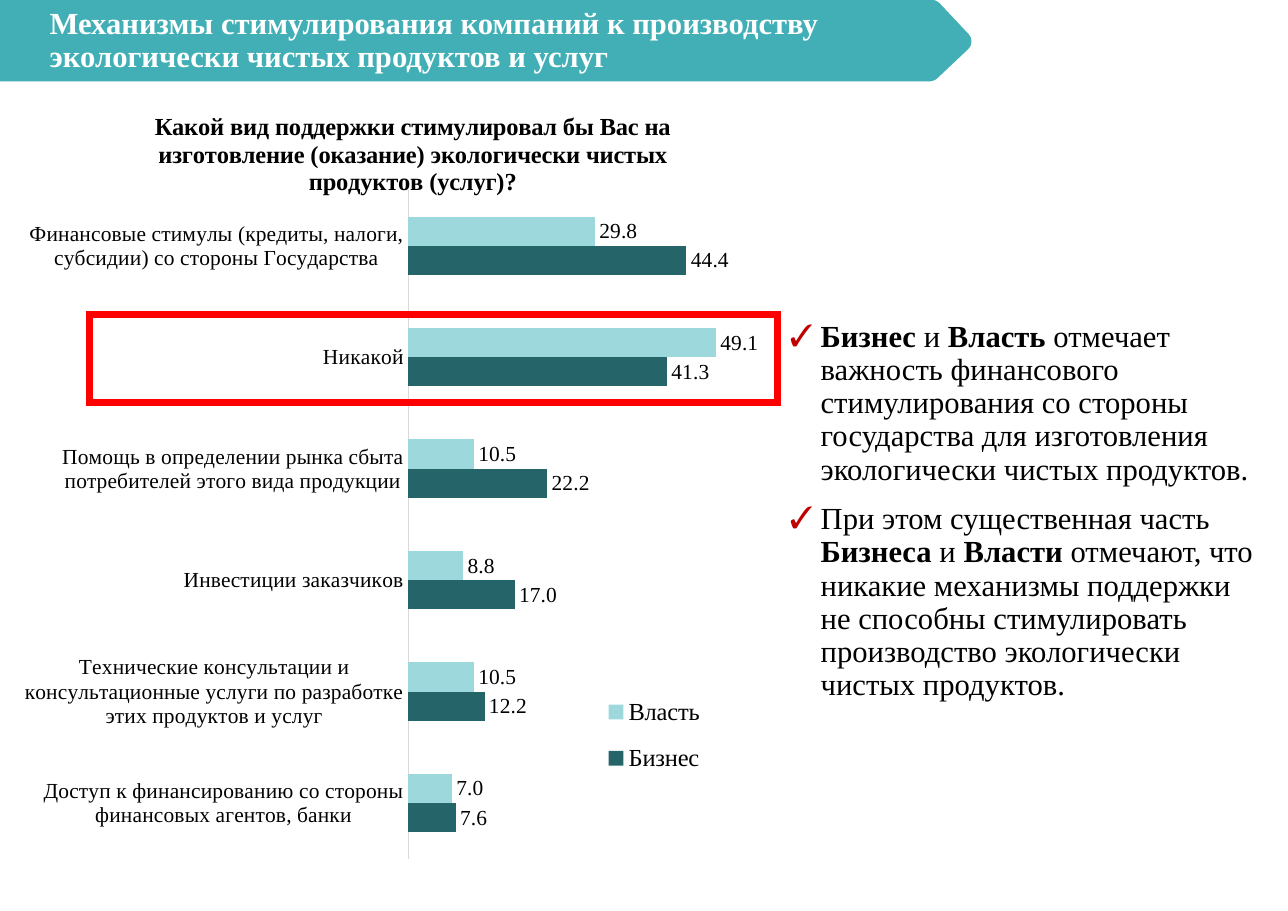
from dataclasses import dataclass

from lxml.etree import SubElement as Sub
from pptx import Presentation
from pptx.chart.data import CategoryChartData as Data
from pptx.dml.color import RGBColor as RGB
from pptx.enum.chart import XL_CHART_TYPE as Kind
from pptx.enum.chart import XL_LABEL_POSITION as Spot
from pptx.enum.chart import XL_LEGEND_POSITION as Side
from pptx.enum.chart import XL_TICK_LABEL_POSITION as Tag
from pptx.enum.chart import XL_TICK_MARK as Tick
from pptx.enum.shapes import MSO_SHAPE as Form
from pptx.enum.text import MSO_ANCHOR as Anchor
from pptx.enum.text import MSO_AUTO_SIZE as Fit
from pptx.enum.text import PP_ALIGN as Align
from pptx.oxml import parse_xml
from pptx.oxml.ns import nsdecls, qn
from pptx.util import Cm, Pt

FACE = "Times New Roman"
BLACK = RGB(0, 0, 0)
WHITE = RGB(255, 255, 255)
TEAL = RGB(0x41, 0xAF, 0xB5)
DARK = RGB(0x25, 0x65, 0x69)
LIGHT = RGB(0x9D, 0xD9, 0xDC)
GRAY = RGB(0xD9, 0xD9, 0xD9)
RED = RGB(255, 0, 0)
WINE = RGB(0xC0, 0, 0)


@dataclass
class Box:
    left: float
    top: float
    width: float
    height: float

    def cm(self) -> tuple:
        return Cm(self.left), Cm(self.top), Cm(self.width), Cm(self.height)


@dataclass
class Group:
    name: str
    color: RGB
    vals: tuple


CHOICES = (
    "Доступ к финансированию со стороны финансовых агентов, банки",
    "Технические консультации и консультационные услуги по разработке этих продуктов и услуг",
    "Инвестиции заказчиков",
    "Помощь в определении рынка сбыта потребителей этого вида продукции",
    "Никакой",
    "Финансовые стимулы (кредиты, налоги, субсидии) со стороны Государства",
)
GROUPS = (
    Group("Бизнес", DARK, (7.6, 12.2, 17.0, 22.2, 41.3, 44.4)),
    Group("Власть", LIGHT, (7.0, 10.5, 8.8, 10.5, 49.1, 29.8)),
)
ASK = (
    "Какой вид поддержки стимулировал бы Вас на изготовление "
    "(оказание) экологически чистых продуктов (услуг)?"
)
HEAD = "Механизмы стимулирования компаний к производству экологически чистых продуктов и услуг"
POINTS = (
    (
        ("Бизнес", True),
        (" и ", False),
        ("Власть", True),
        (" отмечает важность финансового стимулирования со стороны государства "
         "для изготовления экологически чистых продуктов.", False),
    ),
    (
        ("При этом существенная часть ", False),
        ("Бизнеса", True),
        (" и ", False),
        ("Власти", True),
        (" отмечают, что никакие механизмы поддержки не способны стимулировать "
         "производство экологически чистых продуктов.", False),
    ),
)


def style(font, size: int, color: RGB = BLACK, bold: bool | None = None) -> None:
    font.name, font.size, font.bold = FACE, Pt(size), bold
    font.color.rgb = color


def place(shape, box: Box) -> None:
    shape.left, shape.top, shape.width, shape.height = box.cm()


def block(slide, form: Form, box: Box, turn: float = 0):
    shape = slide.shapes.add_shape(form, *box.cm())
    shape.shadow.inherit = False
    shape.rotation = turn
    return shape


def paint(slide, form: Form, box: Box, turn: float = 0) -> None:
    shape = block(slide, form, box, turn)
    shape.fill.solid()
    shape.fill.fore_color.rgb = TEAL
    shape.line.fill.background()


def layout(box: Box):
    node = parse_xml(f"<c:layout {nsdecls('c')}><c:manualLayout/></c:layout>")
    pairs = (("xMode", "edge"), ("yMode", "edge"), ("x", box.left),
             ("y", box.top), ("w", box.width), ("h", box.height))
    for tag, val in pairs:
        Sub(node[0], qn(f"c:{tag}")).set("val", str(val))
    return node


def clear(node) -> None:
    for old in node.findall(qn("c:layout")):
        node.remove(old)


def plot(slide) -> None:
    data = Data(number_format="0.0")
    data.categories = CHOICES
    for group in GROUPS:
        data.add_series(group.name, group.vals)
    box = Box(0.54, 1.95, 17.96, 18.29)
    chart = slide.shapes.add_chart(Kind.BAR_CLUSTERED, *box.cm(), data).chart
    style(chart.font, 14)

    chart.has_title = True
    line = chart.chart_title.text_frame.paragraphs[0]
    line.text = ASK
    style(line.font, 16, bold=True)
    chart.chart_title.include_in_layout = False

    chart.has_legend = True
    key = chart.legend
    key.position, key.include_in_layout = Side.BOTTOM, False
    style(key.font, 16)
    clear(key._element)
    mark = key._element.find(qn("c:legendPos"))
    mark.addnext(layout(Box(0.73, 0.75, 0.16, 0.14)))

    rows, scale = chart.category_axis, chart.value_axis
    rows.major_tick_mark = Tick.NONE
    style(rows.tick_labels.font, 14)
    rows.format.line.color.rgb = GRAY
    rows.format.line.width = Pt(0.75)
    scale.minimum_scale, scale.maximum_scale = 0, 60
    scale.has_major_gridlines = False
    scale.tick_label_position = Tag.NONE
    scale.visible = False

    bars = chart.plots[0]
    bars.gap_width, bars.overlap = 182, 0
    bars.vary_by_categories = False
    for series, group in zip(bars.series, GROUPS):
        series.format.fill.solid()
        series.format.fill.fore_color.rgb = group.color
        tags = series.data_labels
        tags.show_value, tags.position = True, Spot.OUTSIDE_END
        tags.number_format, tags.number_format_is_linked = "0.0", False
        style(tags.font, 14)

    area = chart._chartSpace.chart.plotArea
    clear(area)
    spot = layout(Box(0.494, 0.133, 0.483, 0.843))
    inner = parse_xml(f'<c:layoutTarget {nsdecls("c")} val="inner"/>')
    spot[0].insert(0, inner)
    area.insert(0, spot)


def check(para) -> None:
    props = para._p.get_or_add_pPr()
    props.set("marL", str(Cm(0.71)))
    props.set("indent", str(Cm(-0.71)))
    hue = Sub(props, qn("a:buClr"))
    Sub(hue, qn("a:srgbClr")).set("val", str(WINE))
    Sub(props, qn("a:buFont")).set("typeface", FACE)
    Sub(props, qn("a:buChar")).set("char", "✓")


def write(body) -> None:
    place(body, Box(17.96, 7.28, 11.51, 9.75))
    frame = body.text_frame
    frame.auto_size = Fit.NONE
    for num, parts in enumerate(POINTS):
        para = frame.add_paragraph() if num else frame.paragraphs[0]
        para.line_spacing = 0.9
        para.space_before = Pt(11 if num else 0)
        check(para)
        style(para.font, 20)
        for text, bold in parts:
            run = para.add_run()
            run.text, run.font.bold = text, bold


def main() -> None:
    deck = Presentation()
    deck.slide_width, deck.slide_height = Cm(29.7), Cm(21)
    slide = deck.slides.add_slide(deck.slide_layouts[1])
    title, body = slide.placeholders

    paint(slide, Form.RECTANGLE, Box(0, 0, 21.46, 1.88))
    paint(slide, Form.ROUNDED_RECTANGLE, Box(20.73, 0.2, 1.47, 1.47), 46.7)
    slide.shapes._spTree.append(title._element)
    place(title, Box(0.89, 0.1, 21.54, 1.68))
    title.text = HEAD
    title.text_frame.auto_size = Fit.NONE
    title.text_frame.vertical_anchor = Anchor.MIDDLE
    line = title.text_frame.paragraphs[0]
    line.alignment, line.line_spacing = Align.LEFT, 0.9
    style(line.font, 20, WHITE, True)

    plot(slide)
    write(body)
    frame = block(slide, Form.RECTANGLE, Box(2.06, 7.26, 15.88, 2.01))
    frame.fill.background()
    frame.line.color.rgb, frame.line.width = RED, Pt(4.5)
    Sub(frame.line._ln, qn("a:miter")).set("lim", "800000")
    deck.save("out.pptx")


if __name__ == "__main__":
    main()
